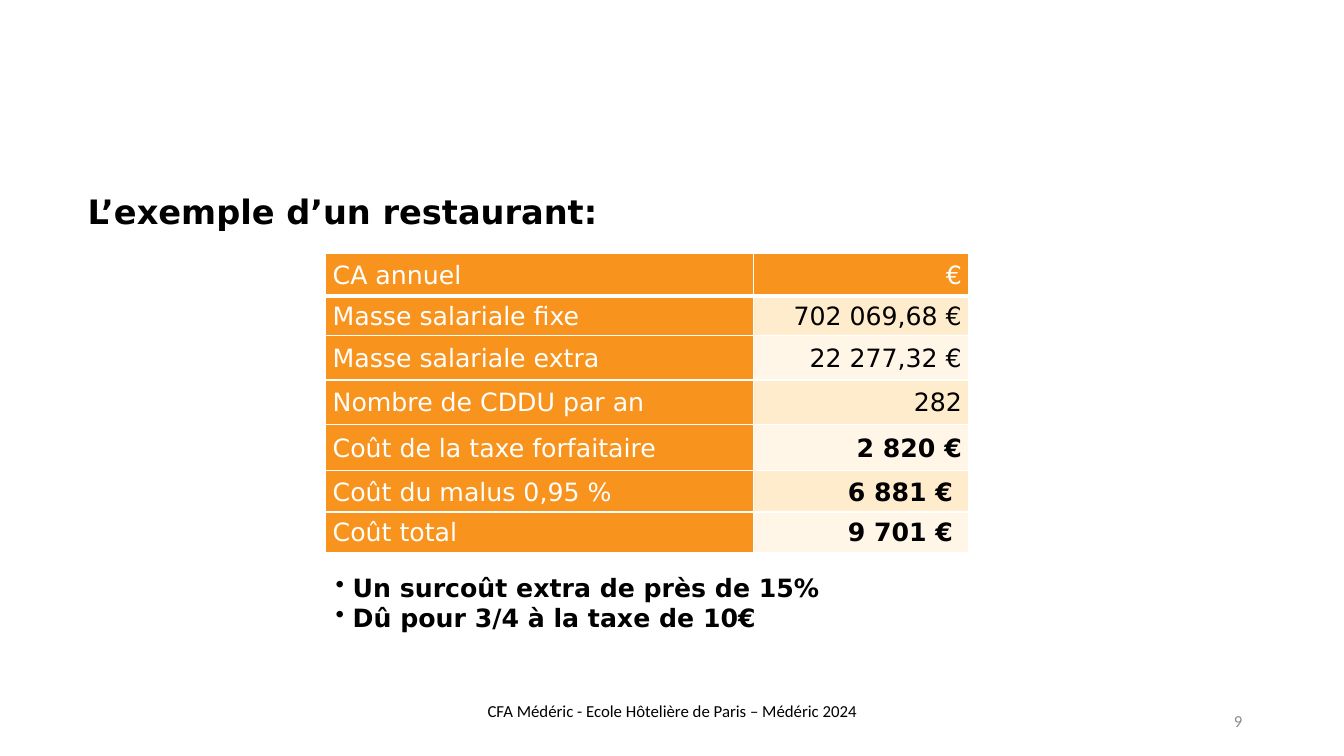
from lxml import etree
from pptx import Presentation
from pptx.dml.color import RGBColor
from pptx.enum.text import MSO_ANCHOR, PP_ALIGN
from pptx.oxml.ns import qn
from pptx.util import Inches, Pt

ORANGE, WHITE, BLACK, GREY = "F8931D", "FFFFFF", "000000", "8C8C8C"
BANDS = ["FFECCC", "FFF6E7"]
BODY_FONT, FOOTER_FONT = "DejaVu Sans", "Calibri"

TITLE = "L’exemple d’un restaurant:"
# label, amount, amount in bold, row height
COSTS = [
    ("CA annuel", " €", False, 0.43),
    ("Masse salariale fixe", "702 069,68 €", False, 0.39),
    ("Masse salariale extra", "22 277,32 €", False, 0.44),
    ("Nombre de CDDU par an", "282", False, 0.44),
    ("Coût de la taxe forfaitaire", "2 820 €", True, 0.46),
    ("Coût du malus 0,95 %", "6 881 € ", True, 0.41),
    ("Coût total", "9 701 € ", True, 0.4),
]
COLUMN_WIDTHS = [4.24, 2.14]
CONCLUSIONS = ["Un surcoût extra de près de 15%", "Dû pour 3/4 à la taxe de 10€"]
FOOTER = "CFA Médéric - Ecole Hôtelière de Paris – Médéric 2024"
PAGE_NUMBER = "9"


def color(code):
    return RGBColor.from_string(code)


def add_span(para, text, size, code=BLACK, bold=False, font=BODY_FONT):
    span = para.add_run()
    span.text = text
    span.font.size = Pt(size)
    span.font.name = font
    span.font.bold = bold
    span.font.color.rgb = color(code)


def add_text(page, place, lines, size, code=BLACK, bold=False, font=BODY_FONT,
             align=PP_ALIGN.LEFT, anchor=MSO_ANCHOR.TOP, top_inset=0.05, bullet=False):
    frame = page.shapes.add_textbox(*map(Inches, place)).text_frame
    frame.word_wrap = True
    frame.vertical_anchor = anchor
    frame.margin_top = Inches(top_inset)
    for index, line in enumerate(lines):
        para = frame.add_paragraph() if index else frame.paragraphs[0]
        para.alignment = align
        if bullet:
            add_bullet(para)
        add_span(para, line, size, code, bold, font)


def add_bullet(para, indent=0.17):
    properties = para._p.get_or_add_pPr()
    properties.set("marL", str(Inches(indent)))
    properties.set("indent", str(-Inches(indent)))
    etree.SubElement(properties, qn("a:buChar")).set("char", "•")


def set_borders(cell, bottom):
    properties = cell._tc.get_or_add_tcPr()
    widths = {"a:lnL": 1, "a:lnR": 1, "a:lnT": 1, "a:lnB": bottom}
    for index, (side, width) in enumerate(widths.items()):
        line = etree.Element(qn(side))
        line.set("w", str(Pt(width)))
        fill = etree.SubElement(line, qn("a:solidFill"))
        etree.SubElement(fill, qn("a:srgbClr")).set("val", WHITE)
        properties.insert(index, line)


def fill_cell(cell, text, fill, code, bold, align, bottom):
    cell.fill.solid()
    cell.fill.fore_color.rgb = color(fill)
    cell.vertical_anchor = MSO_ANCHOR.MIDDLE
    cell.margin_left = cell.margin_right = Inches(0.07)
    cell.margin_top = cell.margin_bottom = 0
    para = cell.text_frame.paragraphs[0]
    para.alignment = align
    para.line_spacing = 1.07
    para.space_after = Pt(8)
    add_span(para, text, 18, code, bold)
    set_borders(cell, bottom)


def add_cost_table(page):
    height = sum(cost[3] for cost in COSTS)
    place = (3.23, 2.51, sum(COLUMN_WIDTHS), height)
    table = page.shapes.add_table(len(COSTS), 2, *map(Inches, place)).table
    for column, width in zip(table.columns, COLUMN_WIDTHS):
        column.width = Inches(width)
    for index, (label, amount, bold, row_height) in enumerate(COSTS):
        table.rows[index].height = Inches(row_height)
        header = index == 0
        bottom = 3 if header else 1
        fill = ORANGE if header else BANDS[(index - 1) % 2]
        code = WHITE if header else BLACK
        fill_cell(table.cell(index, 0), label, ORANGE, WHITE, False, PP_ALIGN.LEFT, bottom)
        fill_cell(table.cell(index, 1), amount, fill, code, bold, PP_ALIGN.RIGHT, bottom)


def main():
    deck = Presentation()
    deck.slide_width, deck.slide_height = Inches(13.33), Inches(7.5)
    page = deck.slides.add_slide(deck.slide_layouts[6])
    add_cost_table(page)
    add_text(page, (3.23, 5.61, 6.39, 1.01), CONCLUSIONS, 18, bold=True,
             top_inset=0.07, bullet=True)
    add_text(page, (0.77, 1.84, 11.65, 0.5), [TITLE], 24, bold=True)
    add_text(page, (4.42, 6.95, 4.5, 0.4), [FOOTER], 12, font=FOOTER_FONT,
             align=PP_ALIGN.CENTER, top_inset=0)
    add_text(page, (9.42, 6.95, 3, 0.4), [PAGE_NUMBER], 12, GREY, font=FOOTER_FONT,
             align=PP_ALIGN.RIGHT, anchor=MSO_ANCHOR.MIDDLE)
    deck.save("out.pptx")


if __name__ == "__main__":
    main()
